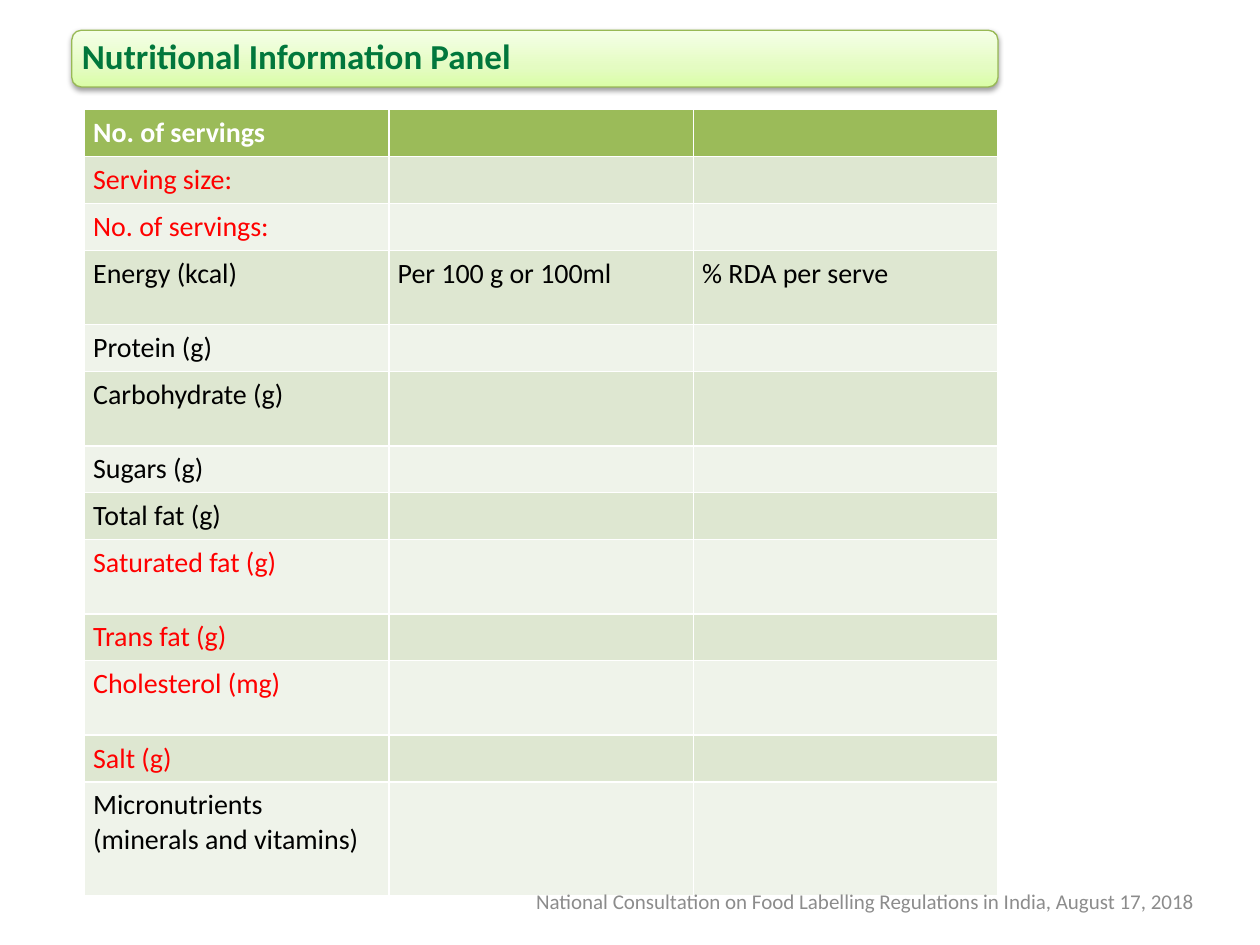
"""Builds the nutritional information panel slide."""
from copy import deepcopy

from lxml import etree
from pptx import Presentation
from pptx.dml.color import RGBColor
from pptx.enum.shapes import MSO_SHAPE
from pptx.enum.text import MSO_ANCHOR, MSO_AUTO_SIZE, PP_ALIGN
from pptx.oxml.ns import qn
from pptx.util import Inches, Pt

ROUNDED = MSO_SHAPE.ROUNDED_RECTANGLE
MIDDLE = MSO_ANCHOR.MIDDLE
NO_FIT = MSO_AUTO_SIZE.NONE
LEFT, RIGHT = PP_ALIGN.LEFT, PP_ALIGN.RIGHT

WHITE = RGBColor(0xFF, 0xFF, 0xFF)
BLACK = RGBColor(0x00, 0x00, 0x00)
RED = RGBColor(0xFF, 0x00, 0x00)
GREEN = RGBColor(0x01, 0x77, 0x3C)
GREY = RGBColor(0x8C, 0x8C, 0x8C)
HEADER = RGBColor(0x9B, 0xBB, 0x59)
BANDS = (RGBColor(0xEF, 0xF3, 0xEA), RGBColor(0xDE, 0xE7, 0xD1))
EDGE = RGBColor(0x98, 0xB9, 0x55)
STOPS = (
    (0, RGBColor(0xDA, 0xFD, 0xA7)),
    (0.35, RGBColor(0xE4, 0xFC, 0xC2)),
    (1, RGBColor(0xF5, 0xFF, 0xE7)),
)

TITLE_BOX = [Inches(v) for v in (0.57, 0.24, 7.35, 0.45)]
TABLE_BOX = [Inches(v) for v in (0.67, 0.87, 7.25, 6.21)]
FOOTER_BOX = [Inches(v) for v in (2.92, 6.95, 6.83, 0.4)]
SINGLE, DOUBLE, TRIPLE = 0.37, 0.59, 0.9
CELL_SIZE = Pt(16)

ROWS = (
    (SINGLE, WHITE, ("No. of servings",)),
    (SINGLE, RED, ("Serving size:",)),
    (SINGLE, RED, ("No. of servings:",)),
    (DOUBLE, BLACK, ("Energy (kcal)", "Per 100 g or 100ml", "% RDA per serve")),
    (SINGLE, BLACK, ("Protein (g)",)),
    (DOUBLE, BLACK, ("Carbohydrate (g)",)),
    (SINGLE, BLACK, ("Sugars (g)",)),
    (SINGLE, BLACK, ("Total fat (g)",)),
    (DOUBLE, RED, ("Saturated fat (g)",)),
    (SINGLE, RED, ("Trans fat (g)",)),
    (DOUBLE, RED, ("Cholesterol (mg)",)),
    (SINGLE, RED, ("Salt (g)",)),
    (TRIPLE, BLACK, ("Micronutrients\v(minerals and vitamins)",)),
)


def set_attrs(obj, values):
    """Set each attribute of obj from a dict."""
    for name, value in values.items():
        setattr(obj, name, value)


def format_text(p, size, color, bold=False):
    """Give the runs of a paragraph their font."""
    for r in p.runs:
        set_attrs(r.font, {"name": "Calibri", "size": size, "bold": bold})
        r.font.color.rgb = color


def add_panel(s):
    """Add the shaded panel behind the title."""
    sp = s.shapes.add_shape(ROUNDED, *TITLE_BOX)
    sp.fill.gradient()
    sp.fill.gradient_angle = 90
    stops = sp._element.spPr.find(".//" + qn("a:gsLst"))
    stops.append(deepcopy(stops[0]))
    for stop, (position, color) in zip(sp.fill.gradient_stops, STOPS):
        stop.position = position
        stop.color.rgb = color
    sp.line.color.rgb = EDGE
    sp.line.width = Pt(0.75)
    sp.shadow.inherit = False
    effects = sp._element.spPr.find(qn("a:effectLst"))
    shadow = etree.SubElement(
        effects, qn("a:outerShdw"), blurRad=str(Pt(3.1)), dist=str(Pt(1.6)),
        dir="5400000", rotWithShape="0")
    color = etree.SubElement(shadow, qn("a:srgbClr"), val="000000")
    etree.SubElement(color, qn("a:alpha"), val="38000")
    s.shapes._spTree.insert(2, sp._element)


def set_title(s, text):
    """Place and format the title placeholder."""
    sp = s.shapes.title
    set_attrs(sp, dict(zip(("left", "top", "width", "height"), TITLE_BOX)))
    tf = sp.text_frame
    tf.text = text
    sides = ("margin_left", "margin_top", "margin_right", "margin_bottom")
    set_attrs(tf, dict.fromkeys(sides, Inches(0.08)))
    set_attrs(tf, {"auto_size": NO_FIT, "vertical_anchor": MIDDLE,
                   "word_wrap": True})
    p = tf.paragraphs[0]
    set_attrs(p, {"alignment": LEFT, "line_spacing": 0.9})
    format_text(p, Pt(20), GREEN, True)


def fill_cell(cell, text, color, fill, bold):
    """Write one table cell, keeping the text size in empty cells too."""
    cell.fill.solid()
    cell.fill.fore_color.rgb = fill
    set_attrs(cell, {"margin_left": Inches(0.07), "margin_right": Inches(0.07),
                     "margin_top": Inches(0.05), "margin_bottom": Inches(0.05)})
    p = cell.text_frame.paragraphs[0]
    if text:
        p.text = text
        format_text(p, CELL_SIZE, color, bold)
    else:
        etree.SubElement(p._p, qn("a:endParaRPr"), sz=str(int(CELL_SIZE.pt * 100)))


def add_nutrition_table(s):
    """Add the banded table of nutrients."""
    table = s.shapes.add_table(len(ROWS), 3, *TABLE_BOX).table
    for i, (height, color, texts) in enumerate(ROWS):
        table.rows[i].height = Inches(height)
        fill = BANDS[i % 2] if i else HEADER
        for j, cell in enumerate(table.rows[i].cells):
            text = texts[j] if j < len(texts) else ""
            fill_cell(cell, text, color, fill, i == 0)


def add_footer(s, text):
    """Add the event line at the bottom right."""
    tf = s.shapes.add_textbox(*FOOTER_BOX).text_frame
    set_attrs(tf, {"word_wrap": True, "vertical_anchor": MIDDLE,
                   "margin_right": Inches(0.27)})
    p = tf.paragraphs[0]
    p.text = text
    p.alignment = RIGHT
    format_text(p, Pt(12), GREY)


def main():
    """Build and save the slide."""
    prs = Presentation()
    set_attrs(prs, {"slide_width": Inches(10), "slide_height": Inches(7.5)})
    s = prs.slides.add_slide(prs.slide_layouts[5])
    add_panel(s)
    set_title(s, "Nutritional Information Panel")
    add_nutrition_table(s)
    add_footer(s, "National Consultation on Food Labelling Regulations in India, "
                  "August 17, 2018")
    prs.save("out.pptx")


if __name__ == "__main__":
    main()
